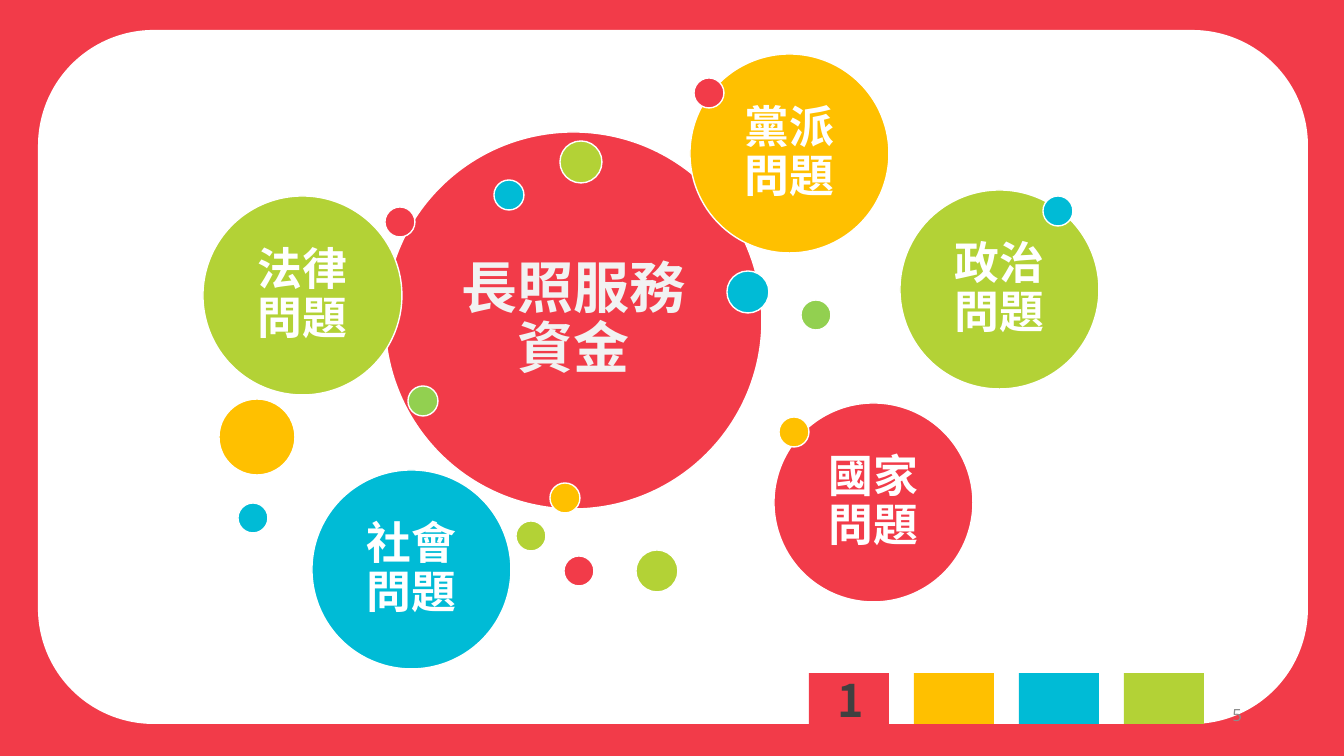
from pptx import Presentation
from pptx.dml.color import RGBColor
from pptx.enum.shapes import MSO_SHAPE
from pptx.enum.text import MSO_ANCHOR, PP_ALIGN
from pptx.oxml.ns import qn
from pptx.util import Emu, Pt
from lxml import etree

ELLIPSE = MSO_SHAPE.OVAL
RECTANGLE = MSO_SHAPE.RECTANGLE
ROUNDED = MSO_SHAPE.ROUNDED_RECTANGLE
TOP, MIDDLE = MSO_ANCHOR.TOP, MSO_ANCHOR.MIDDLE
LEFT, CENTER, RIGHT = PP_ALIGN.LEFT, PP_ALIGN.CENTER, PP_ALIGN.RIGHT

EMU_PER_PX = 914400 / 100.8
COLORS = {
    "red": "F23B49", "yellow": "FFC000", "cyan": "00BBD6", "lime": "B3D236",
    "green": "92D050", "white": "FFFFFF", "pale": "F2F2F2",
    "dark": "404040", "gray": "8C8C8C",
}
CJK_FONT, LATIN_FONT = "Noto Sans CJK SC", "Open Sans"
DOT, BUTTON, BALL, BUBBLE, HUB = 30, 42, 76, 199, 377

CIRCLES = [
    (385, 132, HUB, "red", "長照服務資金"),
    (516, 521, DOT, "lime", ""),
    (801, 300, DOT, "green", ""),
    (636, 550, BUTTON, "lime", ""),
    (494, 180, DOT, "cyan", ""),
    (408, 386, DOT, "green", ""),
    (203, 196, BUBBLE, "lime", "法律問題"),
    (560, 141, BUTTON, "lime", ""),
    (219, 399, BALL, "yellow", ""),
    (900, 190, BUBBLE, "lime", "政治問題"),
    (727, 271, BUTTON, "cyan", ""),
    (238, 503, DOT, "cyan", ""),
    (550, 483, DOT, "yellow", ""),
    (774, 403, BUBBLE, "red", "國家問題"),
    (779, 417, DOT, "yellow", ""),
    (312, 470, BUBBLE, "cyan", "社會問題"),
    (564, 556, DOT, "red", ""),
    (690, 54, BUBBLE, "yellow", "黨派問題"),
    (385, 207, DOT, "red", ""),
    (694, 78, DOT, "red", ""),
    (1043, 196, DOT, "cyan", ""),
]


def px(length):
    return Emu(round(length * EMU_PER_PX))


def color(name):
    return RGBColor.from_string(COLORS[name])


def write(frame, text, *, size, ink, font=CJK_FONT, bold=False, align=LEFT,
          anchor=TOP, inset=None, spacing=None):
    frame.word_wrap = True
    frame.vertical_anchor = anchor
    if inset is not None:
        frame.margin_left = frame.margin_right = px(inset)
        frame.margin_top = frame.margin_bottom = px(inset)
    para = frame.paragraphs[0]
    para.alignment = align
    para.line_spacing = spacing
    span = para.add_run()
    span.text = text
    span.font.name = font
    span.font.size = Pt(size)
    span.font.bold = bold
    span.font.color.rgb = color(ink)
    etree.SubElement(span.font._element, qn("a:ea")).set("typeface", font)


class Painter:
    def __init__(self, deck):
        self.page = deck.slides.add_slide(deck.slide_layouts[6])

    def background(self, fill):
        self.page.background.fill.solid()
        self.page.background.fill.fore_color.rgb = color(fill)

    def shape(self, kind, left, top, width, height, fill, line=None):
        shape = self.page.shapes.add_shape(
            kind, px(left), px(top), px(width), px(height))
        shape.shadow.inherit = False
        shape.fill.solid()
        shape.fill.fore_color.rgb = color(fill)
        if line:
            shape.line.color.rgb = color(line)
            shape.line.width = Pt(1)
        else:
            shape.line.fill.background()
        return shape

    def circle(self, left, top, size, fill, label):
        circle = self.shape(ELLIPSE, left, top, size, size, fill, "white")
        if label:
            is_hub = size == HUB
            write(circle.text_frame, label, size=40 if is_hub else 32,
                  ink="pale" if is_hub else "white", bold=True, align=CENTER,
                  anchor=MIDDLE, inset=17 if is_hub else 13, spacing=0.9)

    def text(self, left, top, width, height, text, **style):
        box = self.page.shapes.add_textbox(
            px(left), px(top), px(width), px(height))
        write(box.text_frame, text, **style)


def main():
    deck = Presentation()
    deck.slide_width, deck.slide_height = px(1344), px(756)
    painter = Painter(deck)
    painter.background("red")
    painter.shape(ROUNDED, 38, 30, 1270, 694, "white")
    painter.text(950, 695, 302, 40, "5", size=12, ink="gray",
                 font=LATIN_FONT, align=RIGHT, anchor=MIDDLE)
    for index, fill in enumerate(("red", "yellow", "cyan", "lime")):
        painter.shape(RECTANGLE, 809 + 105 * index, 673, 80, 51, fill)
    painter.text(828, 668, 45, 65, "1", size=32, ink="dark", bold=True)
    for circle in CIRCLES:
        painter.circle(*circle)
    deck.save("out.pptx")


if __name__ == "__main__":
    main()
